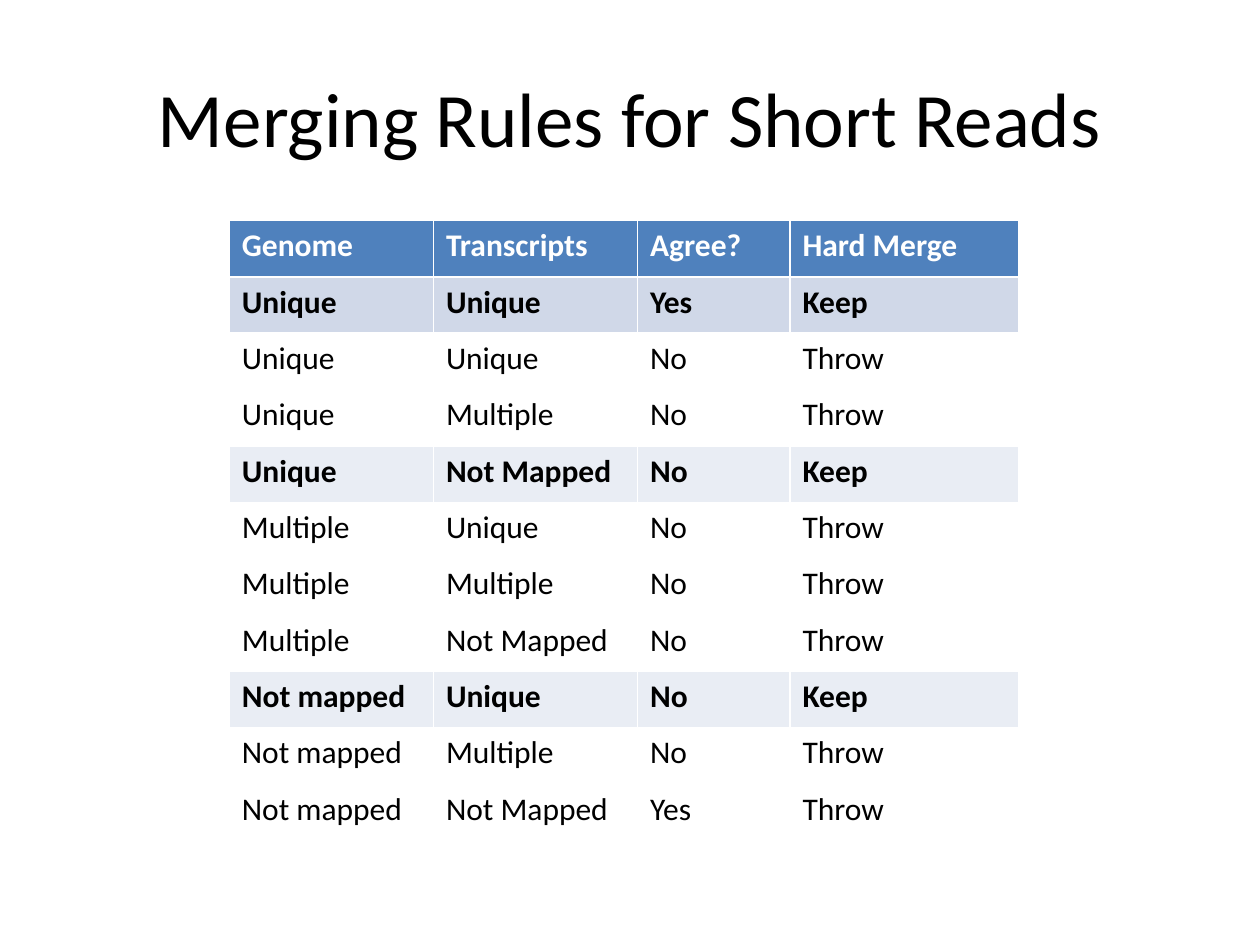
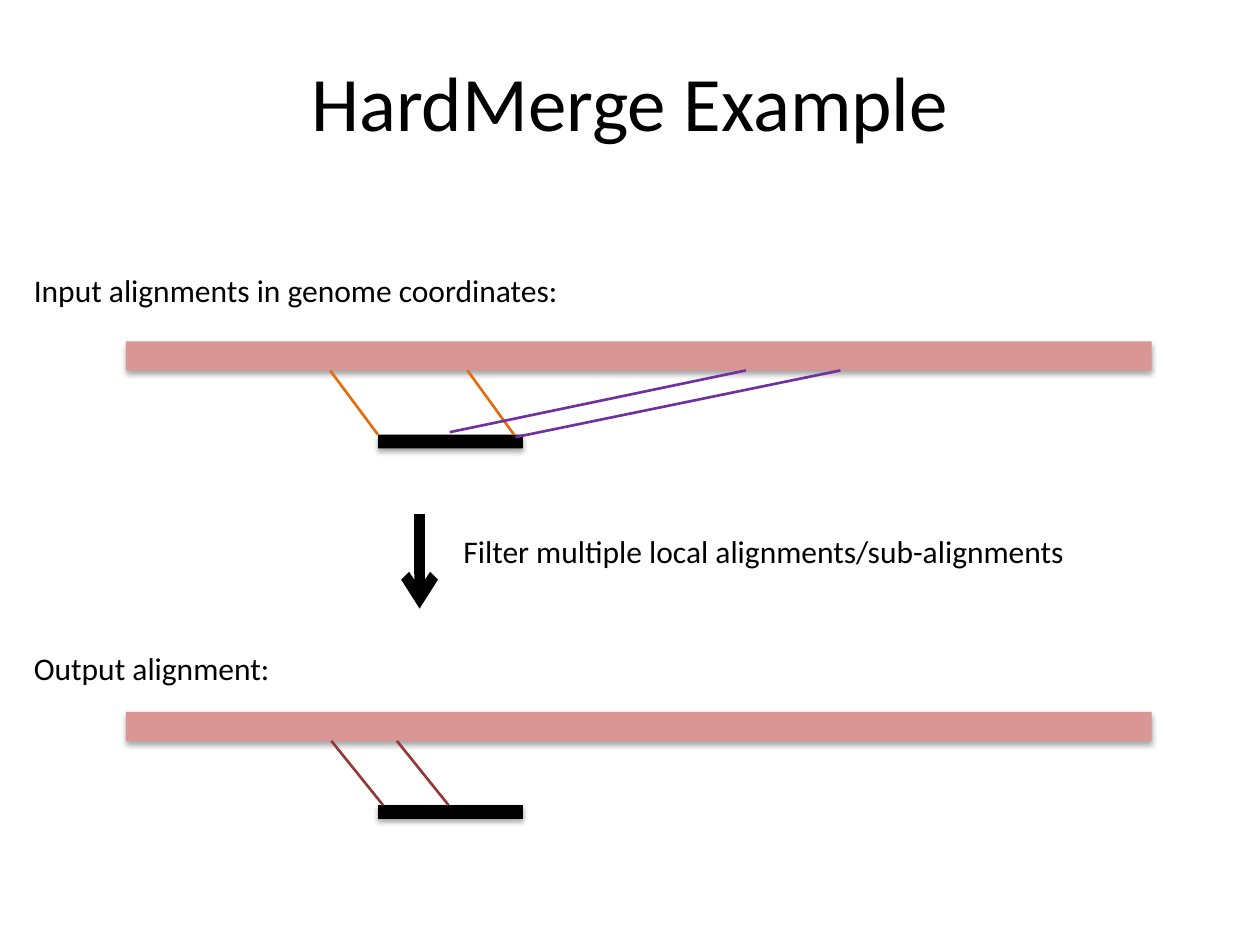
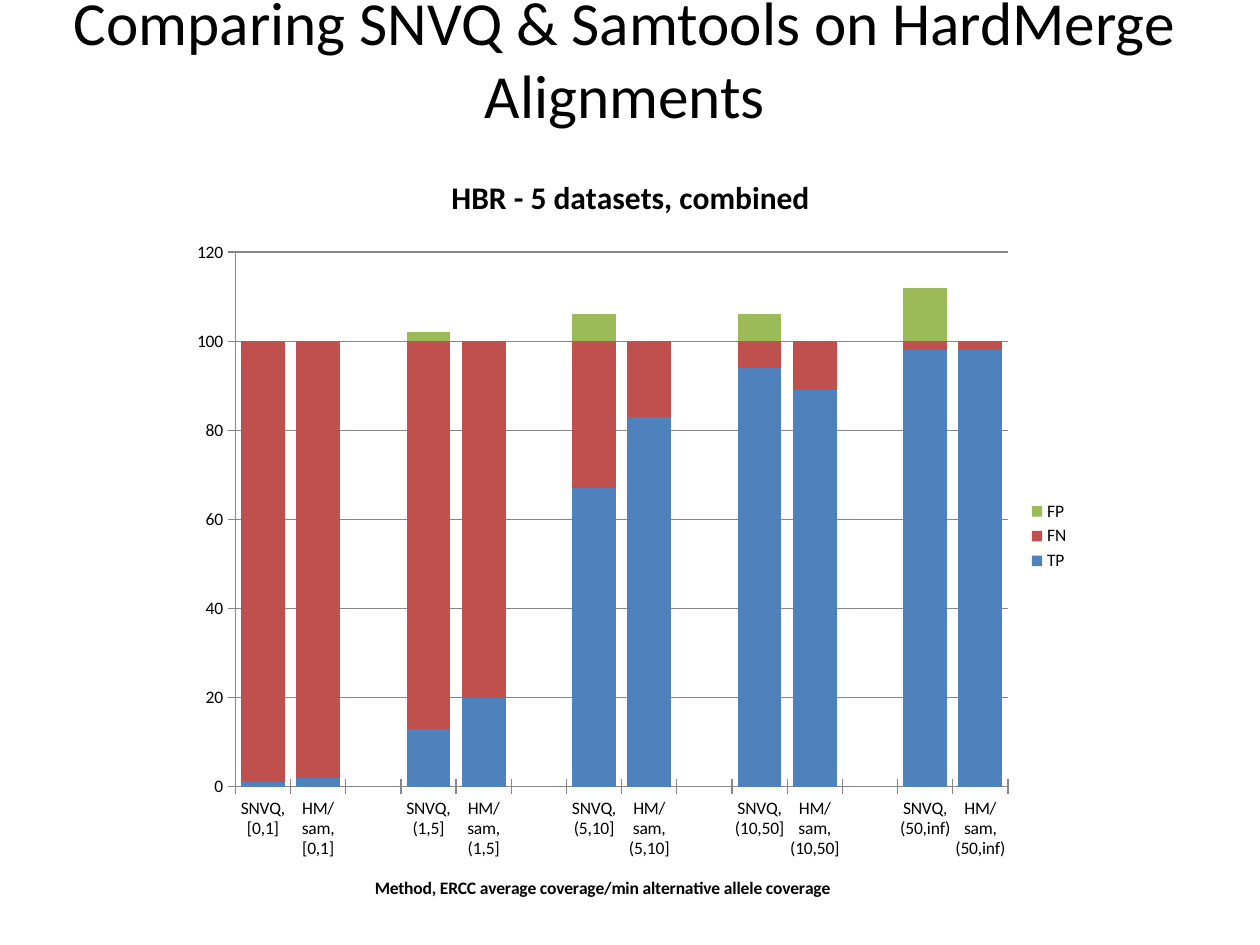
from lxml import etree
from pptx import Presentation
from pptx import util as u
from pptx.chart import data as cd
from pptx.dml.color import RGBColor
from pptx.enum import chart as ch, shapes, text
from pptx.oxml.ns import qn

BLACK = RGBColor(0, 0, 0)
WHITE = RGBColor(255, 255, 255)
BLUE = RGBColor(0x4F, 0x81, 0xBD)
RED = RGBColor(0xC0, 0x50, 0x4D)
GREEN = RGBColor(0x9B, 0xBB, 0x59)
GRAY = RGBColor(0x87, 0x87, 0x87)
BAND = RGBColor(0xD0, 0xD8, 0xE8)
PALE = RGBColor(0xE9, 0xED, 0xF4)
PINK = RGBColor(0xD9, 0x96, 0x94)
ORANGE = RGBColor(0xE4, 0x6C, 0x0A)
PURPLE = RGBColor(0x70, 0x30, 0xA0)
MAROON = RGBColor(0x95, 0x37, 0x35)

RULES = [
    ("Genome", "Transcripts", "Agree?", "Hard Merge"),
    ("Unique", "Unique", "Yes", "Keep"),
    ("Unique", "Unique", "No", "Throw"),
    ("Unique", "Multiple", "No", "Throw"),
    ("Unique", "Not Mapped", "No", "Keep"),
    ("Multiple", "Unique", "No", "Throw"),
    ("Multiple", "Multiple", "No", "Throw"),
    ("Multiple", "Not Mapped", "No", "Throw"),
    ("Not mapped", "Unique", "No", "Keep"),
    ("Not mapped", "Multiple", "No", "Throw"),
    ("Not mapped", "Not Mapped", "Yes", "Throw"),
]
WIDTHS = (1.62, 1.62, 1.21, 1.82)
FILLS = {0: BLUE, 1: BAND, 4: PALE, 8: PALE}

INPUT = [(3.08, 0.74, 2.71, ORANGE), (2.57, 0.72, 4.92, PURPLE),
         (3.09, 0.76, 5.67, PURPLE), (2, 0.74, 1.62, ORANGE)]
OUTPUT = [(2.04, 0.74, 1.63, MAROON), (2.56, 0.74, 2.15, MAROON)]

RANGES = ("[0,1]", "(1,5]", "(5,10]", "(10,50]", "(50,inf)")
SERIES = [
    ("TP", BLUE, [(1, 2), (13, 20), (67, 83), (94, 89), (98, 98)]),
    ("FN", RED, [(99, 98), (87, 80), (33, 17), (6, 11), (2, 2)]),
    ("FP", GREEN, [(0, 0), (2, 0), (6, 0), (6, 0), (12, 0)]),
]


def put(item, **vals):
    """Set each named value on the item."""
    for key, val in vals.items():
        setattr(item, key, val)


def style(font, size, color=BLACK, bold=False):
    """Give a font the deck's face with a size, colour and weight."""
    put(font, name="Calibri", size=u.Pt(size), bold=bold)
    font.color.rgb = color


def node(root, tag, **vals):
    """Add an XML child with the given values."""
    return etree.SubElement(root, qn(tag), vals)


def inches(*vals):
    """Turn numbers into lengths."""
    return [u.Inches(v) for v in vals]


def label(slide, box, words, size=18, wrap=False):
    """Write a left-aligned line of text in a box."""
    frame = slide.shapes.add_textbox(*inches(*box)).text_frame
    put(frame, word_wrap=wrap, text=words)
    style(frame.paragraphs[0].runs[0].font, size)
    return frame


def title(slide, words, box=(0.5, 0.3, 9, 1.25), size=44):
    """Write a centred slide title."""
    frame = label(slide, box, words, size, True)
    frame.vertical_anchor = text.MSO_ANCHOR.MIDDLE
    frame.paragraphs[0].alignment = text.PP_ALIGN.CENTER


def bar(slide, box, color):
    """Draw a filled bar with a soft shadow below."""
    shape = slide.shapes.add_shape(shapes.MSO_SHAPE.RECTANGLE, *inches(*box))
    shape.fill.solid()
    shape.fill.fore_color.rgb = color
    shape.line.fill.background()
    shape.shadow.inherit = False
    glow = node(shape._element.spPr.find(qn("a:effectLst")), "a:outerShdw",
                blurRad=str(u.Pt(3.1)), dist=str(u.Pt(1.8)),
                dir="5400000", rotWithShape="0")
    tint = node(glow, "a:srgbClr", val=str(BLACK))
    node(tint, "a:alpha", val="35000")


def link(slide, ends, color, width=1.5, arrow=False):
    """Draw a straight line, with an arrowhead if asked."""
    line = slide.shapes.add_connector(shapes.MSO_CONNECTOR.STRAIGHT, *inches(*ends))
    line.line.color.rgb = color
    line.line.width = u.Pt(width)
    if arrow:
        node(line.line._get_or_add_ln(), "a:tailEnd", type="arrow")
    node(line._element.spPr, "a:effectLst")


def track(slide, left, top, links):
    """Draw a genome bar, a read below it and the lines between them."""
    bar(slide, (left, top, 8.14, 0.23), PINK)
    bar(slide, (left + 2, top + 0.74, 1.15, 0.11), BLACK)
    for low, drop, high, color in links:
        link(slide, (left + low, top + drop, left + high, top + 0.23), color)


def grid(slide, left, top, width, height):
    """Build the table of merging rules."""
    table = slide.shapes.add_table(len(RULES), len(WIDTHS),
                                   *inches(left, top, width, height)).table
    table.horz_banding = False
    for col, wide in zip(table.columns, WIDTHS):
        col.width = u.Inches(wide)
    for r, row in enumerate(RULES):
        table.rows[r].height = u.Inches(height / len(RULES))
        for c, words in enumerate(row):
            cell = table.cell(r, c)
            cell.text = words
            cell.fill.solid()
            cell.fill.fore_color.rgb = FILLS.get(r, WHITE)
            style(cell.text_frame.paragraphs[0].runs[0].font, 18,
                  BLACK if r else WHITE, r in FILLS)


def spread(pairs, gap):
    """Join pairs into one list with a gap between them."""
    return [v for pair in pairs for v in (*pair, gap)][:-1]


def head(item, words, size):
    """Give a chart or an axis a bold title."""
    frame = (item.chart_title if hasattr(item, "chart_title") else item.axis_title).text_frame
    frame.text = words
    style(frame.paragraphs[0].runs[0].font, size, bold=True)


def stack(slide, box):
    """Build the stacked column chart."""
    data = cd.CategoryChartData()
    data.categories = spread([("SNVQ," + s, "HM/sam," + s) for s in RANGES], "")
    for name, _, pairs in SERIES:
        data.add_series(name, spread(pairs, None))
    chart = slide.shapes.add_chart(ch.XL_CHART_TYPE.COLUMN_STACKED,
                                   *inches(*box), data).chart
    style(chart.font, 10)
    head(chart, "HBR - 5 datasets, combined", 18)
    head(chart.category_axis,
         "Method, ERCC average coverage/min alternative allele coverage", 10)
    chart.has_legend = True
    put(chart.legend, position=ch.XL_LEGEND_POSITION.RIGHT, include_in_layout=False)
    plot = chart.plots[0]
    put(plot, gap_width=26, overlap=100, vary_by_categories=False)
    for bars, (_, color, _) in zip(plot.series, SERIES):
        bars.format.fill.solid()
        bars.format.fill.fore_color.rgb = color
    rise = chart.value_axis
    put(rise, minimum_scale=0, maximum_scale=120, major_unit=20,
        has_major_gridlines=True)
    for axis in (chart.category_axis, rise):
        axis.major_tick_mark = ch.XL_TICK_MARK.CROSS
        axis.format.line.color.rgb = GRAY
    rise.major_gridlines.format.line.color.rgb = GRAY


def rules(slide):
    """Fill the slide of merging rules."""
    title(slide, "Merging Rules for Short Reads")
    grid(slide, 1.82, 1.75, 6.27, 4.92)


def sample(slide):
    """Fill the slide with the merge example."""
    title(slide, "HardMerge Example", (0.5, 0.17, 9, 1.25))
    label(slide, (0.17, 2.1, 4.41, 0.4), "Input alignments in genome coordinates:")
    track(slide, 1, 2.71, INPUT)
    link(slide, (3.33, 4.08, 3.33, 4.83), BLACK, 6, True)
    label(slide, (3.58, 4.17, 5.02, 0.4), "Filter multiple local alignments/sub-alignments")
    label(slide, (0.17, 5.1, 2.09, 0.4), "Output alignment:")
    track(slide, 1, 5.65, OUTPUT)


def compare(slide):
    """Fill the slide that compares the methods."""
    title(slide, "Comparing SNVQ & Samtools on HardMerge Alignments",
          (-0.33, -0.17, 10.58, 1.25), 35)
    stack(slide, (1.42, 1.17, 7.17, 6.17))


def main():
    """Build and save the deck."""
    deck = Presentation()
    put(deck, slide_width=u.Inches(10), slide_height=u.Inches(7.5))
    for fill in (rules, sample, compare):
        fill(deck.slides.add_slide(deck.slide_layouts[6]))
    deck.save("out.pptx")


if __name__ == "__main__":
    main()
